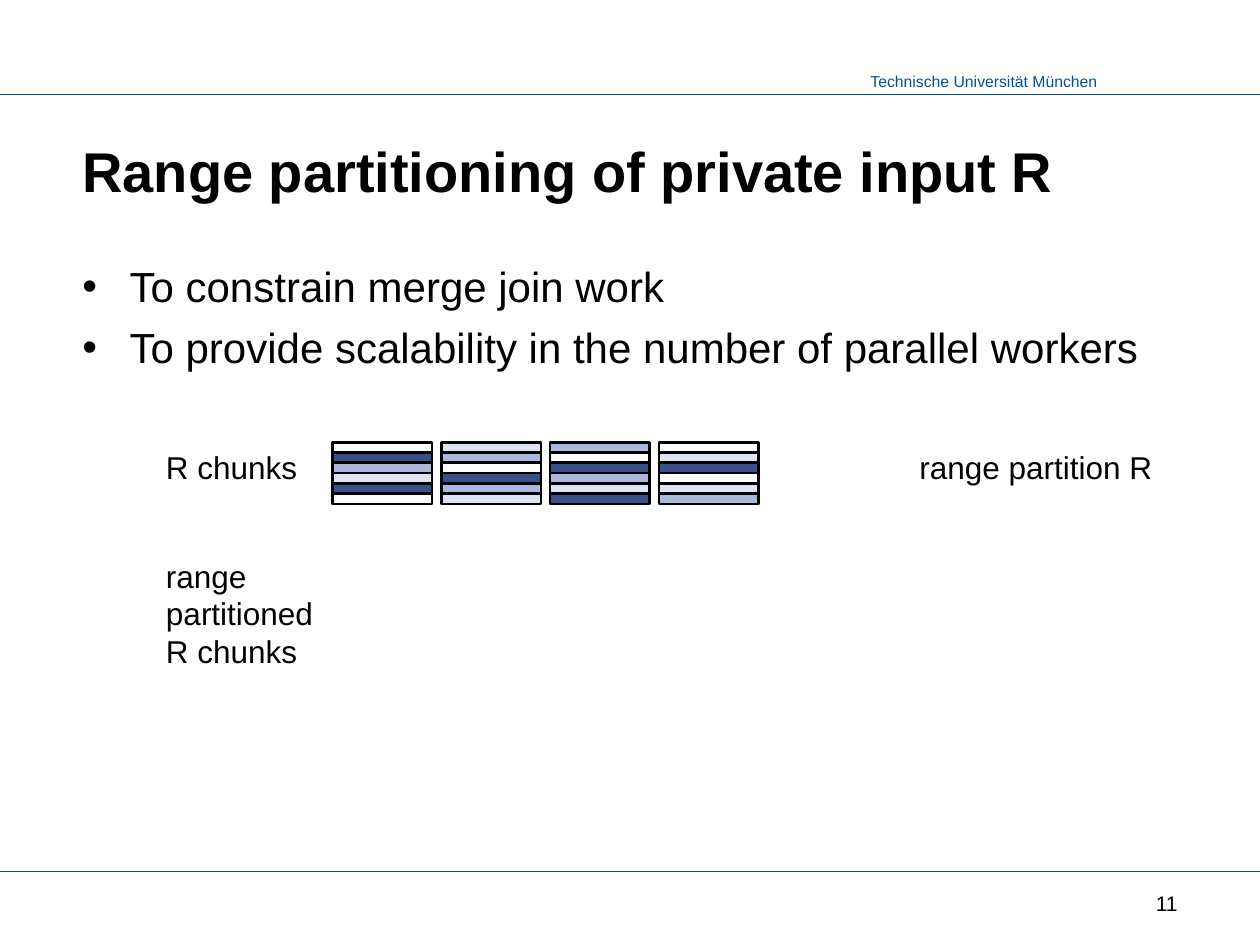
from pptx import Presentation
from pptx.dml.color import RGBColor
from pptx.enum.shapes import MSO_CONNECTOR, MSO_SHAPE
from pptx.enum.text import MSO_ANCHOR, PP_ALIGN
from pptx.oxml.ns import qn
from pptx.util import Pt
from lxml.etree import SubElement

COLORS = {
    "text": "000000",
    "brand": "005293",
    "white": "FFFFFF",
    "pale": "DDE3F1",
    "mid": "AAB8DB",
    "dark": "3A5089",
}

# Stripe colours of each chunk of R, from top to bottom
CHUNKS = [
    ["white", "dark", "mid", "pale", "dark", "white"],
    ["pale", "mid", "white", "dark", "mid", "pale"],
    ["mid", "white", "dark", "mid", "pale", "dark"],
    ["white", "pale", "dark", "white", "pale", "mid"],
]


def rgb(name):
    return RGBColor.from_string(COLORS[name])


def add_text(s, box, lines, size, color="text", bold=False, bullet=False, **frame):
    tf = s.shapes.add_textbox(*map(Pt, box)).text_frame
    for key, value in {"word_wrap": True, **frame}.items():
        setattr(tf, key, value)
    for i, line in enumerate(lines):
        p = tf.paragraphs[0] if i == 0 else tf.add_paragraph()
        p.text = line
        if i:
            p.space_before = Pt(6)
        if bullet:
            add_bullet(p)
        for r in p.runs:
            for key, value in {"name": "Arial", "size": Pt(size), "bold": bold}.items():
                setattr(r.font, key, value)
            r.font.color.rgb = rgb(color)
    return tf


def add_bullet(p):
    pPr = p._p.get_or_add_pPr()
    pPr.set("marL", str(Pt(27)))
    pPr.set("indent", str(Pt(-27)))
    SubElement(pPr, qn("a:buFont")).set("typeface", "Arial")
    SubElement(pPr, qn("a:buChar")).set("char", "•")


def add_rule(s, y, width):
    line = s.shapes.add_connector(MSO_CONNECTOR.STRAIGHT, 0, Pt(y), Pt(width), Pt(y))
    line.line.color.rgb = rgb("brand")
    line.line.width = Pt(0.75)
    SubElement(line._element.spPr, qn("a:effectLst"))


def add_frame(s, width):
    # Header, rules and page number
    add_text(s, (490.3, 37.4, 144.7, 18), ["Technische Universität München"], 9,
             "brand", word_wrap=False)
    for y in (54, 498.2):
        add_rule(s, y, width)
    tf = add_text(s, (530, 504, 150, 24), ["11"], 12, vertical_anchor=MSO_ANCHOR.MIDDLE)
    tf.paragraphs[0].alignment = PP_ALIGN.RIGHT


def add_content(s, left, top, width):
    # Title and bullets
    add_text(s, (left, top, width, 48), ["Range partitioning of private input R"], 32,
             bold=True, vertical_anchor=MSO_ANCHOR.BOTTOM)
    add_text(s, (left, top + 73.5, width, 340),
             ["To constrain merge join work",
              "To provide scalability in the number of parallel workers"],
             24, bullet=True)


def add_chunk(s, left, top, width, height, stripes):
    step = height / len(stripes)
    for i, color in enumerate(stripes):
        box = (left, top + i * step, width, step)
        sp = s.shapes.add_shape(MSO_SHAPE.RECTANGLE, *map(Pt, box))
        sp.shadow.inherit = False
        sp.fill.solid()
        sp.fill.fore_color.rgb = rgb(color)
        sp.line.color.rgb = rgb("text")
        sp.line.width = Pt(1.5)


def add_diagram(s, left, top):
    # Labels
    add_text(s, (left, top, 97, 29), ["R chunks"], 18)
    add_text(s, (left + 430.5, top, 159, 29), ["range partition R"], 18)
    add_text(s, (left, top + 61.8, 108, 73), ["range\vpartitioned\vR chunks"], 18)
    # Striped chunks at an equal pitch
    for i, stripes in enumerate(CHUNKS):
        add_chunk(s, left + 102.2 + i * 62.2, top, 56.9, 35.4, stripes)


def main():
    prs = Presentation()
    prs.slide_width, prs.slide_height = Pt(720), Pt(540)
    s = prs.slides.add_slide(prs.slide_layouts[6])
    add_frame(s, 720)
    add_content(s, 40, 72, 640)
    add_diagram(s, 87.8, 252.7)
    prs.save("out.pptx")


if __name__ == "__main__":
    main()
